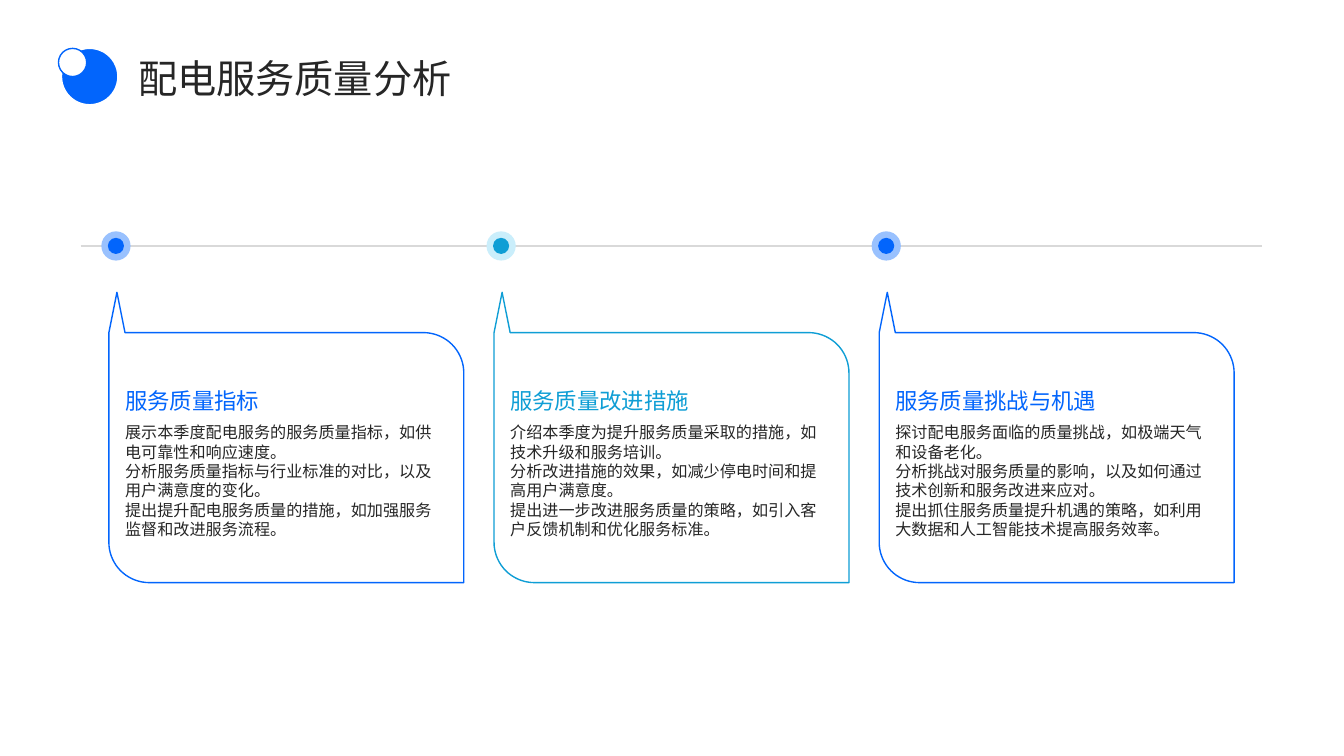
import math

import pptx
import pptx.dml.color
import pptx.enum.shapes
import pptx.enum.text
import pptx.oxml
import pptx.oxml.ns
import pptx.util

RGB = pptx.dml.color.RGBColor
BLUE = RGB(0x02, 0x65, 0xFC)
PALE_BLUE = RGB(0x99, 0xC1, 0xFE)
TEAL = RGB(0x0F, 0x9E, 0xD5)
PALE_TEAL = RGB(0xCA, 0xEE, 0xFB)
INK = RGB(0x26, 0x26, 0x26)
GREY = RGB(0xD9, 0xD9, 0xD9)
WHITE = RGB(0xFF, 0xFF, 0xFF)

WIDTH, HEIGHT = 13.33, 7.5
FIRST_COLUMN, COLUMN_STEP = 1.08, 3.82
TIMELINE = 2.44
ANCHOR = pptx.enum.text.MSO_ANCHOR

CARDS = [
    ("服务质量指标", BLUE, PALE_BLUE, [
        "展示本季度配电服务的服务质量指标，如供电可靠性和响应速度。",
        "分析服务质量指标与行业标准的对比，以及用户满意度的变化。",
        "提出提升配电服务质量的措施，如加强服务监督和改进服务流程。"]),
    ("服务质量改进措施", TEAL, PALE_TEAL, [
        "介绍本季度为提升服务质量采取的措施，如技术升级和服务培训。",
        "分析改进措施的效果，如减少停电时间和提高用户满意度。",
        "提出进一步改进服务质量的策略，如引入客户反馈机制和优化服务标准。"]),
    ("服务质量挑战与机遇", BLUE, PALE_BLUE, [
        "探讨配电服务面临的质量挑战，如极端天气和设备老化。",
        "分析挑战对服务质量的影响，以及如何通过技术创新和服务改进来应对。",
        "提出抓住服务质量提升机遇的策略，如利用大数据和人工智能技术提高服务效率。"]),
]


class Page:
    """Draws styled elements on one slide, placed on a grid of card columns."""

    font = "Noto Sans CJK SC"

    def __init__(self, deck):
        self.slide = deck.slides.add_slide(deck.slide_layouts[5])
        self.shapes = self.slide.shapes

    def column(self, index):
        return FIRST_COLUMN + index * COLUMN_STEP

    def paint(self, shape, fill, line=None):
        shape.shadow.inherit = False
        shape.fill.solid()
        shape.fill.fore_color.rgb = fill
        if line is None:
            shape.line.fill.background()
        else:
            shape.line.color.rgb = line
            shape.line.width = pptx.util.Pt(1)

    def circle(self, x, y, size, fill, line=None):
        corner = pptx.util.Inches(x - size / 2), pptx.util.Inches(y - size / 2)
        side = pptx.util.Inches(size)
        oval = pptx.enum.shapes.MSO_SHAPE.OVAL
        self.paint(self.shapes.add_shape(oval, *corner, side, side), fill, line)

    def rule(self, left, right, y):
        ends = [pptx.util.Inches(value) for value in (left, y, right, y)]
        straight = pptx.enum.shapes.MSO_CONNECTOR.STRAIGHT
        line = self.shapes.add_connector(straight, *ends)
        line.line.color.rgb = GREY
        line.line.width = pptx.util.Pt(1)
        effects = pptx.oxml.parse_xml(
            "<a:effectLst %s/>" % pptx.oxml.ns.nsdecls("a"))
        line._element.spPr.append(effects)

    def callout(self, left, color):
        tip, top, bottom, right, radius = 2.9, 3.3, 5.78, left + 3.52, 0.4

        def arc(x, y, start):
            angles = [math.radians(start + step * 5) for step in range(19)]
            return [(x + radius * math.cos(a), y + radius * math.sin(a))
                    for a in angles]

        points = [(left + 0.08, tip), (left + 0.16, top)]
        points += arc(right - radius, top + radius, -90)
        points += [(right, bottom)]
        points += arc(left + radius, bottom - radius, 90)
        points += [(left, top)]
        start, *others = [(pptx.util.Inches(x), pptx.util.Inches(y))
                          for x, y in points]
        outline = self.shapes.build_freeform(*start)
        outline.add_line_segments(others, close=True)
        self.paint(outline.convert_to_shape(), WHITE, color)

    def text(self, box, lines, size, color, anchor, spacing=None):
        frame = box.text_frame
        frame.word_wrap = True
        frame.auto_size = pptx.enum.text.MSO_AUTO_SIZE.NONE
        frame.vertical_anchor = anchor
        frame.margin_left = frame.margin_right = 0
        frame.margin_top = frame.margin_bottom = 0
        para = frame.paragraphs[0]
        para.alignment = pptx.enum.text.PP_ALIGN.LEFT
        if spacing:
            para.line_spacing = pptx.util.Pt(spacing)
        for index, line in enumerate(lines):
            if index:
                para.add_line_break()
            span = para.add_run()
            span.text = line
            span.font.size = pptx.util.Pt(size)
            span.font.color.rgb = color
            span.font.name = self.font
            asian = pptx.oxml.parse_xml('<a:ea %s typeface="%s"/>' % (
                pptx.oxml.ns.nsdecls("a"), self.font))
            span.font._element.append(asian)

    def place(self, box, left, top, width, height):
        box.left, box.top = pptx.util.Inches(left), pptx.util.Inches(top)
        box.width, box.height = pptx.util.Inches(width), pptx.util.Inches(height)
        return box

    def title(self, wording):
        box = self.place(self.shapes.title, 1.37, 0.51, 11.88, 0.51)
        self.text(box, [wording], 28, INK, ANCHOR.MIDDLE, 34)

    def label(self, left, top, height, *style):
        box = self.place(self.shapes.add_textbox(0, 0, 0, 0),
                         left, top, 3.19, height)
        self.text(box, *style)

    def card(self, index, heading, color, pale, lines):
        left = self.column(index)
        self.circle(left + 0.07, TIMELINE, 0.29, pale)
        self.circle(left + 0.07, TIMELINE, 0.16, color)
        self.callout(left, color)
        self.label(left + 0.16, 3.4, 0.71, [heading], 16, color, ANCHOR.BOTTOM)
        self.label(left + 0.16, 4.19, 1.45, lines, 11.5, INK, ANCHOR.TOP, 13.9)


def main():
    deck = pptx.Presentation()
    deck.slide_width = pptx.util.Inches(WIDTH)
    deck.slide_height = pptx.util.Inches(HEIGHT)
    page = Page(deck)
    page.title("配电服务质量分析")
    page.circle(0.89, 0.76, 0.56, BLUE, WHITE)
    page.circle(0.72, 0.62, 0.28, WHITE, BLUE)
    page.rule(0.8, 12.52, TIMELINE)
    for index, card in enumerate(CARDS):
        page.card(index, *card)
    deck.save("out.pptx")


if __name__ == "__main__":
    main()
